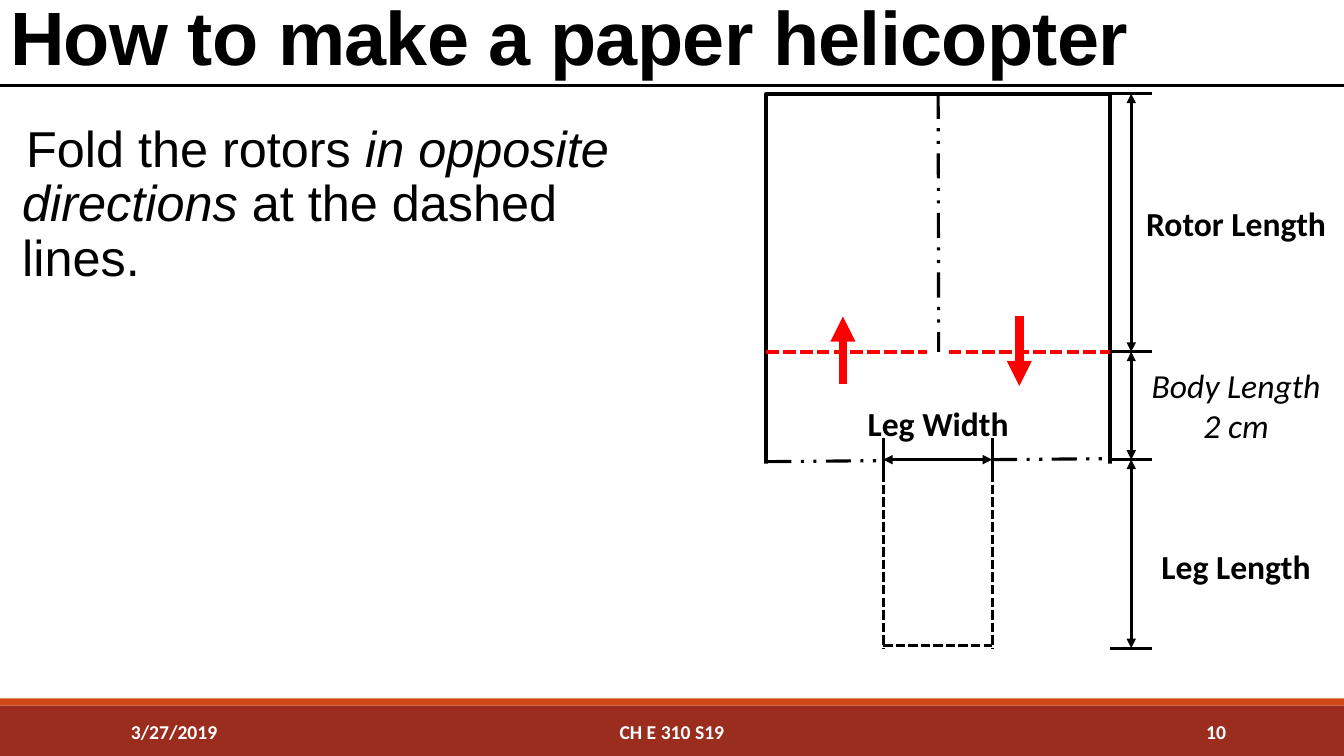
"""Build the slide that shows how to fold the rotors of a paper helicopter."""
from lxml import etree
from pptx import Presentation
from pptx.dml.color import RGBColor
from pptx.enum.dml import MSO_LINE
from pptx.enum.shapes import MSO_CONNECTOR, MSO_SHAPE
from pptx.enum.text import MSO_ANCHOR, MSO_AUTO_SIZE, PP_ALIGN
from pptx.oxml.ns import qn
from pptx.util import Inches, Pt

STRAIGHT, RECTANGLE = MSO_CONNECTOR.STRAIGHT, MSO_SHAPE.RECTANGLE
SHORT_DASH, LONG_DASH = MSO_LINE.SQUARE_DOT, MSO_LINE.DASH_DOT_DOT
TOP, MIDDLE, BOTTOM = MSO_ANCHOR.TOP, MSO_ANCHOR.MIDDLE, MSO_ANCHOR.BOTTOM
LEFT, CENTER, RIGHT = PP_ALIGN.LEFT, PP_ALIGN.CENTER, PP_ALIGN.RIGHT
NO_FIT, GROW = MSO_AUTO_SIZE.NONE, MSO_AUTO_SIZE.SHAPE_TO_FIT_TEXT

WIDTH, HEIGHT = 13.33, 7.5
COLORS = {"ink": "000000", "paper": "FFFFFF", "fold": "FF0000",
          "footer": "9B2D1F", "accent": "D34817"}
COLUMNS = {"sheet": 7.6, "up": 8.36, "leg": 8.76, "middle": 9.31,
           "leg_end": 9.84, "down": 10.11, "sheet_end": 11.01,
           "measure": 11.22, "tick": 11.43, "label": 12.26}
ROWS = {"rule": 0.85, "top": 0.93, "fold": 3.49, "cut": 4.56,
        "leg_end": 6.4, "measure_end": 6.43, "sheet_end": 6.79,
        "accent": 6.93, "footer": 7}


def color(name):
    """Return the named colour."""
    return RGBColor.from_string(COLORS[name])


def place(shape, left, top, width, height):
    """Move and size a shape, in inches."""
    shape.left, shape.top = Inches(left), Inches(top)
    shape.width, shape.height = Inches(width), Inches(height)


def style_span(span, size, font="Calibri", ink="ink", bold=False, italic=False):
    """Format one run of text."""
    span.font.size, span.font.name = Pt(size), font
    span.font.bold, span.font.italic = bold, italic
    span.font.color.rgb = color(ink)


def add_box(slide, left, top, width, height, fill=None, outline=None):
    """Add a rectangle that has a fill or an outline."""
    box = slide.shapes.add_shape(
        RECTANGLE, Inches(left), Inches(top), Inches(width), Inches(height))
    box.shadow.inherit = False
    if fill:
        box.fill.solid()
        box.fill.fore_color.rgb = color(fill)
    else:
        box.fill.background()
    if outline:
        box.line.color.rgb, box.line.width = color(outline), Pt(3)
    else:
        box.line.fill.background()
    return box


def add_line(slide, start, end, ink="ink", weight=2.25, dash=None, arrows=()):
    """Add a straight line with an optional dash and arrowheads."""
    line = slide.shapes.add_connector(
        STRAIGHT, *(Inches(length) for length in (*start, *end)))
    line.line.color.rgb, line.line.width = color(ink), Pt(weight)
    if dash:
        line.line.dash_style = dash
    outline = line.line._get_or_add_ln()
    for arrow in arrows:
        etree.SubElement(outline, qn(f"a:{arrow}End"), type="triangle")
    etree.SubElement(line._element.spPr, qn("a:effectLst"))
    return line


def add_measure(slide, start, end):
    """Add a line with an arrowhead at both ends."""
    add_line(slide, start, end, arrows=("head", "tail"))


def add_text(slide, text, left, top, width, height, align=CENTER, size=24,
             ink="ink", bold=True, wrap=False):
    """Add a text box with one style for all its paragraphs."""
    box = slide.shapes.add_textbox(
        Inches(left), Inches(top), Inches(width), Inches(height))
    frame = box.text_frame
    frame.text, frame.word_wrap = text, wrap
    frame.auto_size = NO_FIT if wrap else GROW
    frame.vertical_anchor = MIDDLE if wrap else TOP
    for para in frame.paragraphs:
        para.alignment = align
        style_span(para.runs[0], size, ink=ink, bold=bold, italic=not bold)


def fill_title(slide, text):
    """Write the slide's title."""
    title = slide.shapes.title
    place(title, 0, 0, WIDTH, ROWS["rule"])
    frame = title.text_frame
    frame.text, frame.word_wrap = text, True
    frame.auto_size, frame.vertical_anchor = NO_FIT, BOTTOM
    para = frame.paragraphs[0]
    para.alignment, para.line_spacing = LEFT, 0.85
    style_span(para.runs[0], 54, "Arial", bold=True)
    para.runs[0]._r.get_or_add_rPr().set("spc", "-50")


def fill_body(slide, parts):
    """Write the instruction from pairs of text and italic."""
    body = slide.placeholders[1]
    place(body, 0.12, 1.18, 6.62, 5.75)
    frame = body.text_frame
    frame.word_wrap, frame.auto_size, frame.vertical_anchor = True, NO_FIT, TOP
    frame.margin_left = frame.margin_right = 0
    para = frame.paragraphs[0]
    para.alignment, para.line_spacing = LEFT, 0.9
    para.space_before, para.space_after = Pt(12), Pt(2)
    for text, italic in parts:
        span = para.add_run()
        span.text = text
        style_span(span, 36, "Arial", italic=italic)
    properties = para._p.get_or_add_pPr()
    properties.set("marL", str(Inches(0.1)))
    properties.set("indent", str(-Inches(0.1)))
    bullet_color = etree.SubElement(properties, qn("a:buClr"))
    etree.SubElement(bullet_color, qn("a:srgbClr"), val=COLORS["accent"])
    etree.SubElement(properties, qn("a:buChar"), char=" ")


def add_frame(slide):
    """Add the title rule and the footer band with its three texts."""
    add_box(slide, 0, ROWS["footer"], WIDTH, HEIGHT - ROWS["footer"], "footer")
    add_box(slide, 0, ROWS["accent"], WIDTH,
            ROWS["footer"] - ROWS["accent"], "accent")
    add_line(slide, (0, ROWS["rule"]), (WIDTH, ROWS["rule"]))
    for text, left, width, align in (("3/27/2019", 1.2, 2.7, LEFT),
                                     ("CH E 310 S19", 4.03, 5.27, CENTER),
                                     ("10", 10.83, 1.43, RIGHT)):
        add_text(slide, text, left, 7.06, width, 0.4, align, 14, "paper",
                 wrap=True)


def add_helicopter(slide):
    """Add the sheet, its cuts and the leg below it."""
    col, row = COLUMNS, ROWS
    sheet = add_box(slide, col["sheet"], row["top"],
                    col["sheet_end"] - col["sheet"],
                    row["sheet_end"] - row["top"], outline="ink")
    rotor_cut = add_line(slide, (col["middle"], row["top"]),
                         (col["middle"], row["fold"]), dash=LONG_DASH)
    rotor_cut.begin_connect(sheet, 0)
    for side in ("leg", "leg_end"):
        add_line(slide, (col[side], row["cut"]), (col[side], 6.82),
                 dash=SHORT_DASH)
        add_line(slide, (col[side], row["cut"] - 0.21),
                 (col[side], row["cut"] + 0.21))
    add_measure(slide, (col["leg"], row["cut"]), (col["leg_end"], row["cut"]))
    add_line(slide, (col["leg_end"], row["cut"]),
             (col["sheet_end"], row["cut"] - 0.01), dash=LONG_DASH)
    add_line(slide, (col["sheet"], row["cut"] + 0.02),
             (col["leg"], row["cut"] + 0.01), dash=LONG_DASH)
    for left in (7.49, 9.87):
        add_box(slide, left, 4.6, 1.25, 2.22, "paper")
    add_line(slide, (col["leg"], row["leg_end"]),
             (col["leg_end"], row["leg_end"]), dash=SHORT_DASH)
    add_box(slide, 8.64, 6.44, 1.28, 0.39, "paper")
    add_text(slide, "Leg Width", 8.5, 3.95, 1.61, 0.5)


def add_lengths(slide):
    """Add the three measured lengths to the right of the sheet."""
    stops = [ROWS[name] for name in ("top", "fold", "cut", "measure_end")]
    for stop in stops:
        add_line(slide, (COLUMNS["sheet_end"], stop), (COLUMNS["tick"], stop))
    for start, end in zip(stops, stops[1:]):
        add_measure(slide, (COLUMNS["measure"], start),
                    (COLUMNS["measure"], end))
    for text, top, width, height, bold in (
            ("Rotor Length", 1.96, 2, 0.5, True),
            ("Body Length\n2 cm", 3.57, 1.9, 0.91, False),
            ("Leg Length", 5.37, 1.7, 0.5, True)):
        add_text(slide, text, COLUMNS["label"] - width / 2, top, width, height,
                 bold=bold)


def add_folds(slide):
    """Add the red fold lines and the arrows for their directions."""
    for start, end in ((COLUMNS["sheet"], 9.19), (9.41, COLUMNS["sheet_end"])):
        add_line(slide, (start, ROWS["fold"]), (end, ROWS["fold"]), "fold", 3,
                 SHORT_DASH)
    for name, start, end in (("down", 3.14, 3.83), ("up", 3.81, 3.14)):
        add_line(slide, (COLUMNS[name], start), (COLUMNS[name], end), "fold", 6,
                 arrows=("tail",))


def main():
    """Build and save the deck."""
    deck = Presentation()
    deck.slide_width, deck.slide_height = Inches(WIDTH), Inches(HEIGHT)
    slide = deck.slides.add_slide(deck.slide_layouts[1])
    fill_title(slide, "How to make a paper helicopter")
    fill_body(slide, (("Fold the rotors ", False),
                      ("in opposite directions", True),
                      (" at the dashed lines.", False)))
    add_frame(slide)
    add_helicopter(slide)
    add_lengths(slide)
    add_folds(slide)
    deck.save("out.pptx")


if __name__ == "__main__":
    main()
